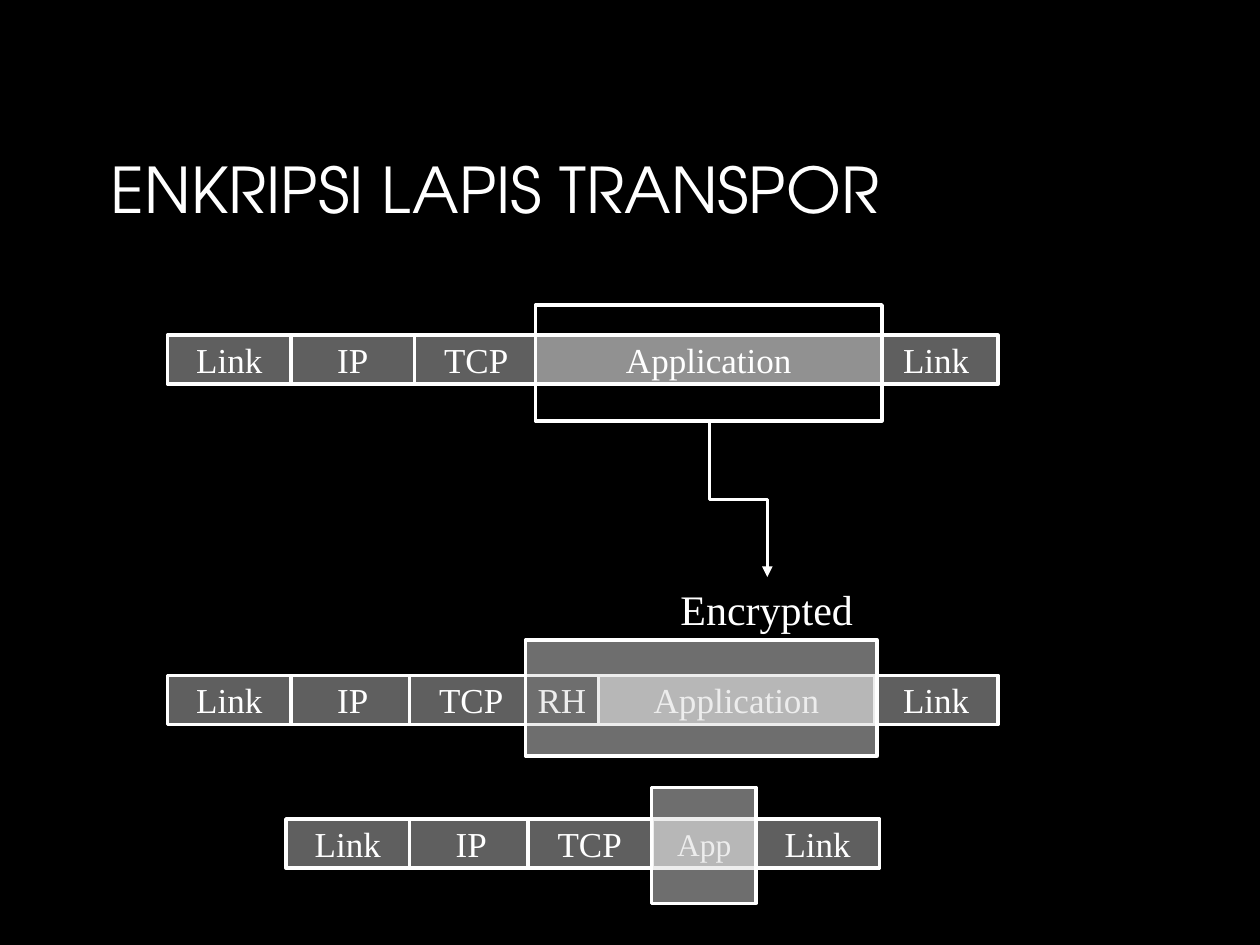
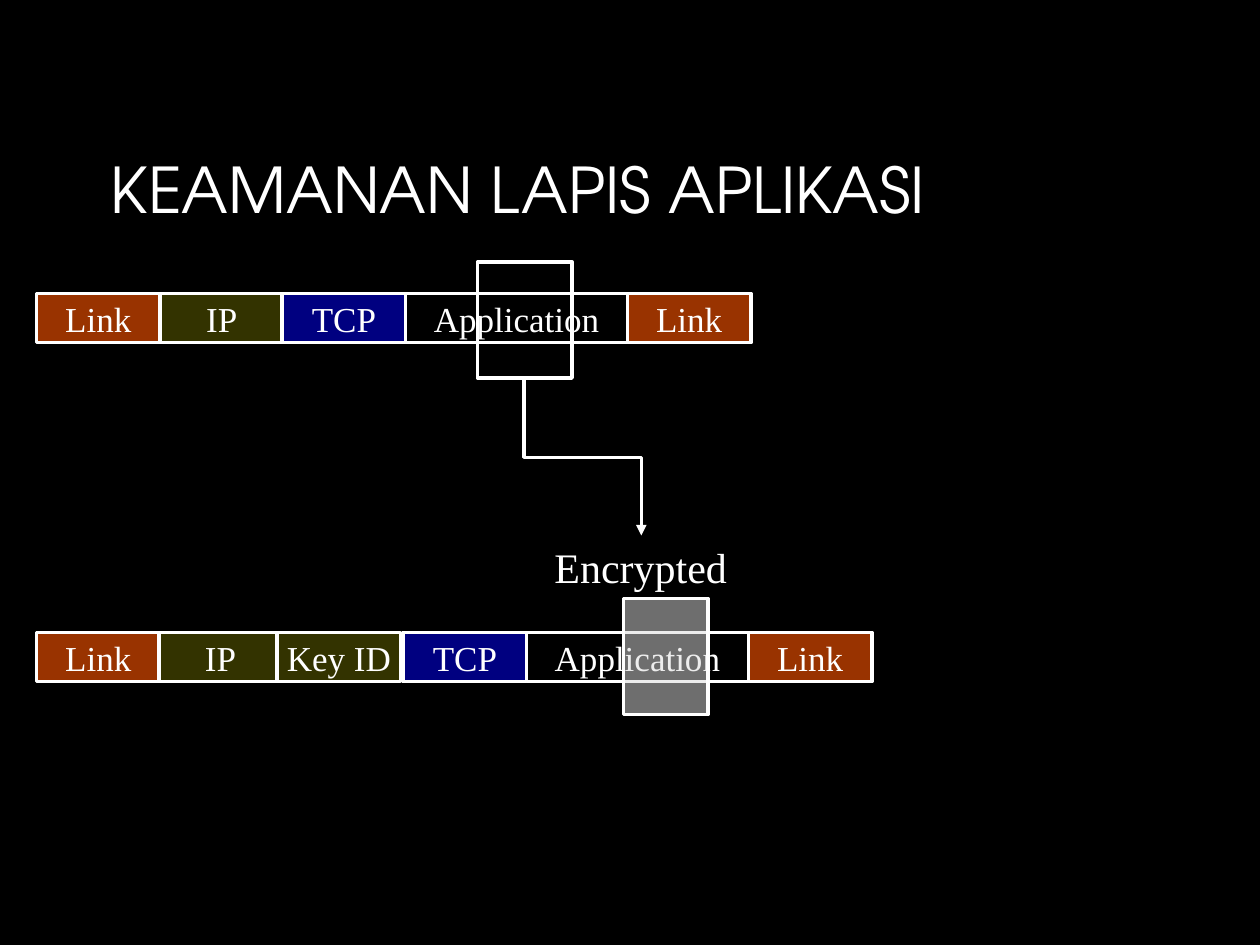
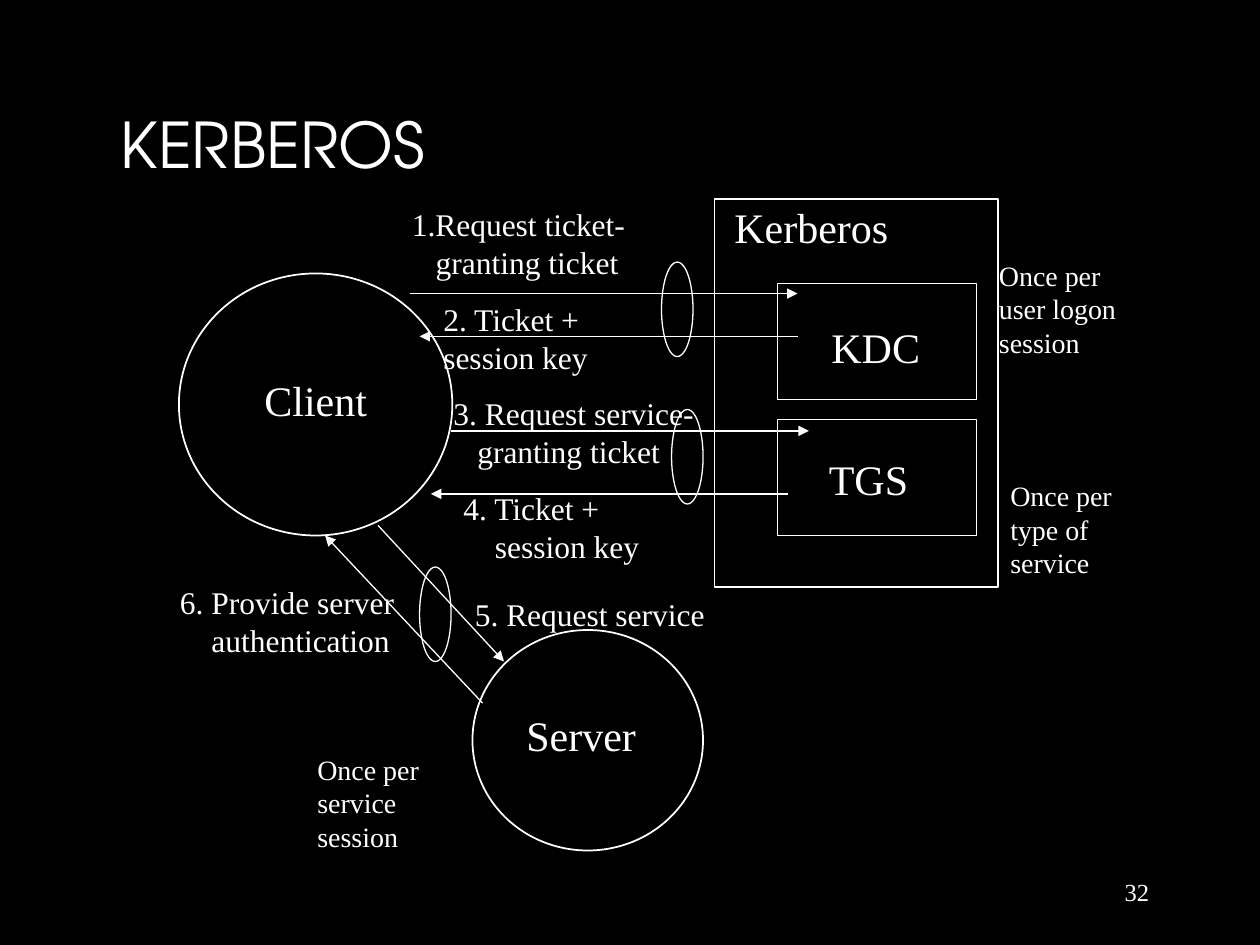
"""Build three slides on transport encryption, application security and Kerberos."""

from dataclasses import dataclass

from lxml.etree import SubElement
from pptx import Presentation
from pptx.dml.color import RGBColor
from pptx.enum.shapes import MSO_CONNECTOR as Link, MSO_SHAPE as Preset
from pptx.enum.text import MSO_ANCHOR as Anchor, MSO_AUTO_SIZE as AutoSize, PP_ALIGN as Align
from pptx.oxml.ns import qn
from pptx.presentation import Presentation as Deck
from pptx.shapes.autoshape import Shape
from pptx.shapes.connector import Connector
from pptx.slide import Slide
from pptx.text.text import TextFrame
from pptx.util import Inches, Pt


@dataclass(frozen=True)
class Theme:
    """Colours, fonts, type sizes and line widths of the deck."""

    black: str = "000000"
    white: str = "FFFFFF"
    header: str = "5F5F5F"
    payload: str = "919191"
    veil: str = "DDDDDD"
    link: str = "993300"
    ip: str = "333300"
    tcp: str = "000080"
    title_font: str = "TeX Gyre Adventor"
    body_font: str = "Times New Roman"
    title: int = 36
    heading: int = 24
    segment: int = 20
    step: int = 18
    note: int = 16
    page: int = 14
    thick: float = 2
    medium: float = 1
    thin: float = 0.75


THEME = Theme()


@dataclass(frozen=True)
class Box:
    """A rectangle in inches."""

    left: float
    top: float
    width: float
    height: float


@dataclass(frozen=True)
class Segment:
    """One field of a packet."""

    label: str
    left: float
    fill: str = THEME.header
    width: float = 0.98
    size: int = THEME.segment


@dataclass(frozen=True)
class Packet:
    """A row of fields, from back to front."""

    top: float
    segments: tuple[Segment, ...]


@dataclass(frozen=True)
class Caption:
    """Free text, with an optional indent for its following lines."""

    box: Box
    lines: tuple[str, ...]
    size: int
    indent: float = 0
    wrap: bool = False


@dataclass(frozen=True)
class Outline:
    """An unfilled shape of the protocol diagram."""

    preset: Preset
    box: Box
    weight: float = THEME.thin


@dataclass(frozen=True)
class Message:
    """An arrow between two parties."""

    start: tuple[float, float]
    end: tuple[float, float]


SEGMENT_HEIGHT = 0.39
FRAME_HEIGHT = 0.92
TITLE_BOX = Box(0.75, 0.53, 8.5, 1.33)

TRANSPORT_PACKETS = (
    Packet(2.66, (
        Segment("Link", 6.94), Segment("Link", 1.33), Segment("IP", 2.31),
        Segment("TCP", 3.29), Segment("Application", 4.25, THEME.payload, 2.75),
    )),
    Packet(5.36, (
        Segment("Link", 6.94), Segment("Link", 1.33), Segment("IP", 2.31),
        Segment("TCP", 3.25), Segment("Application", 4.75, THEME.payload, 2.19),
        Segment("RH", 4.17, THEME.black, 0.58),
    )),
    Packet(6.5, (
        Segment("Link", 6), Segment("Link", 2.27), Segment("IP", 3.25),
        Segment("TCP", 4.19), Segment("App", 5.18, THEME.payload, 0.82, THEME.step),
    )),
)

APPLICATION_PACKETS = (
    Packet(2.33, (
        Segment("Link", 4.98, THEME.link), Segment("Link", 0.29, THEME.link),
        Segment("IP", 1.27, THEME.ip), Segment("TCP", 2.24, THEME.tcp),
        Segment("Application", 3.22, THEME.black, 1.76),
    )),
    Packet(5.02, (
        Segment("Link", 5.94, THEME.link), Segment("Link", 0.29, THEME.link),
        Segment("IP", 1.26, THEME.ip), Segment("TCP", 3.2, THEME.tcp),
        Segment("Application", 4.18, THEME.black, 1.76), Segment("Key ID", 2.2, THEME.ip),
    )),
)

PARTIES = (
    Outline(Preset.OVAL, Box(1.42, 2.17, 2.17, 2.08), THEME.medium),
    Outline(Preset.OVAL, Box(3.75, 5, 1.83, 1.75), THEME.medium),
    Outline(Preset.RECTANGLE, Box(6.17, 2.25, 1.58, 0.92)),
    Outline(Preset.RECTANGLE, Box(6.17, 3.33, 1.58, 0.92)),
    Outline(Preset.RECTANGLE, Box(5.67, 1.58, 2.25, 3.08)),
)
EXCHANGES = tuple(
    Outline(Preset.OVAL, Box(left, top, 0.25, 0.75))
    for left, top in ((5.25, 2.08), (3.33, 4.5), (5.33, 3.25))
)

PROTOCOL_CAPTIONS = (
    Caption(Box(3.17, 1.58, 1.9, 0.7), ("1.Request ticket-", "granting ticket"), THEME.step, 0.19),
    Caption(Box(3.42, 2.33, 1.36, 0.7), ("2. Ticket +", "session key"), THEME.step),
    Caption(Box(3.5, 3.08, 2.11, 0.7), ("3. Request service-", "granting ticket"), THEME.step, 0.19),
    Caption(Box(3.58, 3.83, 1.6, 0.7), ("4. Ticket +", "session key"), THEME.step, 0.25),
    Caption(Box(3.67, 4.67, 2.03, 0.4), ("5. Request service",), THEME.step),
    Caption(Box(1.33, 4.58, 1.9, 0.7), ("6. Provide server", "authentication"), THEME.step, 0.25),
    Caption(Box(2, 2.92, 1.05, 0.5), ("Client",), THEME.heading),
    Caption(Box(6.5, 2.5, 0.91, 0.5), ("KDC",), THEME.heading),
    Caption(Box(6.48, 3.55, 0.83, 0.5), ("TGS",), THEME.heading),
    Caption(Box(4.08, 5.58, 1.07, 0.5), ("Server",), THEME.heading),
    Caption(Box(5.73, 1.55, 1.42, 0.5), ("Kerberos",), THEME.heading),
    Caption(Box(7.83, 2, 1.14, 0.9), ("Once per", "user logon", "session"), THEME.note),
    Caption(Box(2.42, 5.92, 1.01, 0.9), ("Once per", "service", "session"), THEME.note),
    Caption(Box(7.92, 3.75, 1.17, 0.9), ("Once per", "type of", "service"), THEME.note, wrap=True),
)

MESSAGES = (
    Message((3.25, 2.33), (6.33, 2.33)),
    Message((6.33, 2.67), (3.33, 2.67)),
    Message((3.58, 3.42), (6.42, 3.42)),
    Message((6.25, 3.92), (3.42, 3.92)),
    Message((3, 4.17), (4, 5.25)),
    Message((3.83, 5.58), (2.58, 4.25)),
)


def rgb(colour: str) -> RGBColor:
    """Turn a hex string into a colour."""
    return RGBColor.from_string(colour)


def place(box: Box) -> tuple[Inches, Inches, Inches, Inches]:
    """Give the box as lengths."""
    return Inches(box.left), Inches(box.top), Inches(box.width), Inches(box.height)


def write(frame: TextFrame, lines: tuple[str, ...], size: int, align: Align = Align.LEFT,
          font: str = THEME.body_font, indent: float = 0) -> None:
    """Write one paragraph per line, indenting those after the first."""
    for index, line in enumerate(lines):
        paragraph = frame.add_paragraph() if index else frame.paragraphs[0]
        paragraph.alignment = align
        if index and indent:
            paragraph._p.get_or_add_pPr().set("marL", str(Inches(indent)))
        run = paragraph.add_run()
        run.text = line
        run.font.name = font
        run.font.size = Pt(size)
        run.font.color.rgb = rgb(THEME.white)


def set_title_margins(frame: TextFrame) -> None:
    """Apply the wide margins shared by titles and page numbers."""
    frame.margin_left = frame.margin_right = Inches(0.13)
    frame.margin_top = frame.margin_bottom = Inches(0.07)


def add_titled_slide(deck: Deck, text: str, box: Box = TITLE_BOX) -> Slide:
    """Add a slide with the shared title style."""
    slide = deck.slides.add_slide(deck.slide_layouts[5])
    title = slide.shapes.title
    title.left, title.top, title.width, title.height = place(box)
    frame = title.text_frame
    frame.auto_size = AutoSize.NONE
    frame.word_wrap = True
    frame.vertical_anchor = Anchor.BOTTOM
    set_title_margins(frame)
    write(frame, (text,), THEME.title, font=THEME.title_font)
    frame.paragraphs[0].line_spacing = 0.8
    return slide


def add_outline(slide: Slide, outline: Outline) -> Shape:
    """Draw an unfilled white outline."""
    shape = slide.shapes.add_shape(outline.preset, *place(outline.box))
    shape.shadow.inherit = False
    shape.fill.background()
    shape.line.color.rgb = rgb(THEME.white)
    shape.line.width = Pt(outline.weight)
    return shape


def add_packet(slide: Slide, packet: Packet) -> None:
    """Draw the fields of a packet."""
    for segment in packet.segments:
        box = Box(segment.left, packet.top, segment.width, SEGMENT_HEIGHT)
        field = add_outline(slide, Outline(Preset.RECTANGLE, box, THEME.thick))
        field.fill.solid()
        field.fill.fore_color.rgb = rgb(segment.fill)
        field.text_frame.word_wrap = False
        field.text_frame.vertical_anchor = Anchor.MIDDLE
        write(field.text_frame, (segment.label,), segment.size, Align.CENTER)


def add_frame(slide: Slide, left: float, top: float, width: float) -> Shape:
    """Frame the part of a packet to be encrypted."""
    box = Box(left, top, width, FRAME_HEIGHT)
    return add_outline(slide, Outline(Preset.RECTANGLE, box, THEME.thick))


def add_veil(slide: Slide, left: float, top: float, width: float) -> None:
    """Cover the encrypted part of a packet with a translucent frame."""
    veil = add_frame(slide, left, top, width)
    veil.fill.solid()
    veil.fill.fore_color.rgb = rgb(THEME.veil)
    colour = veil._element.spPr.find(qn("a:solidFill"))[0]
    SubElement(colour, qn("a:alpha")).set("val", "50000")


def add_caption(slide: Slide, caption: Caption, align: Align = Align.LEFT,
                anchor: Anchor = Anchor.TOP) -> None:
    """Add free text that fits its box."""
    frame = slide.shapes.add_textbox(*place(caption.box)).text_frame
    frame.word_wrap = caption.wrap
    frame.auto_size = AutoSize.SHAPE_TO_FIT_TEXT
    frame.vertical_anchor = anchor
    write(frame, caption.lines, caption.size, align, indent=caption.indent)


def style_arrow(arrow: Connector, weight: float) -> None:
    """Make a connector a white arrow without shadow."""
    arrow.line.color.rgb = rgb(THEME.white)
    arrow.line.width = Pt(weight)
    properties = arrow._element.spPr
    SubElement(properties.find(qn("a:ln")), qn("a:tailEnd")).set("type", "triangle")
    SubElement(properties, qn("a:effectLst"))


def add_message(slide: Slide, message: Message) -> None:
    """Draw a straight arrow."""
    ends = (Inches(value) for value in message.start + message.end)
    style_arrow(slide.shapes.add_connector(Link.STRAIGHT, *ends), THEME.thin)


def add_step_down(slide: Slide, start: tuple[float, float], end: tuple[float, float]) -> None:
    """Draw an elbow arrow that leaves and arrives vertically."""
    run, drop = end[0] - start[0], end[1] - start[1]
    left = (start[0] + end[0] - drop) / 2
    top = (start[1] + end[1] - run) / 2
    arrow = slide.shapes.add_connector(
        Link.ELBOW, Inches(left + drop), Inches(top), Inches(left), Inches(top + run))
    arrow._element.spPr.find(qn("a:xfrm")).set("rot", str(270 * 60000))
    style_arrow(arrow, THEME.thick)


def add_encrypted_label(slide: Slide, left: float, top: float) -> None:
    """Name the result of the encryption."""
    caption = Caption(Box(left, top, 1.57, 0.5), ("Encrypted",), THEME.heading)
    add_caption(slide, caption, Align.CENTER, Anchor.MIDDLE)


def build_transport(deck: Deck) -> None:
    """Show encryption at the transport layer."""
    slide = add_titled_slide(deck, "ENKRIPSI LAPIS TRANSPOR")
    for packet in TRANSPORT_PACKETS:
        add_packet(slide, packet)
    add_encrypted_label(slide, 5.3, 4.58)
    add_frame(slide, 4.25, 2.42, 2.75)
    add_step_down(slide, (5.63, 3.35), (6.09, 4.58))
    add_veil(slide, 5.17, 6.25, 0.83)
    add_veil(slide, 4.17, 5.08, 2.79)


def build_application(deck: Deck) -> None:
    """Show security at the application layer."""
    slide = add_titled_slide(deck, "KEAMANAN LAPIS APLIKASI")
    for packet in APPLICATION_PACKETS:
        add_packet(slide, packet)
    add_veil(slide, 4.95, 4.75, 0.67)
    add_encrypted_label(slide, 4.3, 4.25)
    add_frame(slide, 3.79, 2.08, 0.75)
    add_step_down(slide, (4.16, 3.01), (5.09, 4.25))


def build_kerberos(deck: Deck) -> None:
    """Show the messages of the Kerberos protocol."""
    slide = add_titled_slide(deck, "KERBEROS", Box(0.83, 0.25, 8.5, 1.25))
    for outline in PARTIES + EXCHANGES:
        add_outline(slide, outline)
    for caption in PROTOCOL_CAPTIONS:
        add_caption(slide, caption)
    for message in MESSAGES:
        add_message(slide, message)
    page = slide.shapes.add_textbox(*place(Box(8.57, 6.97, 0.68, 0.21))).text_frame
    page.word_wrap = True
    page.vertical_anchor = Anchor.MIDDLE
    set_title_margins(page)
    write(page, ("32",), THEME.page, Align.RIGHT)


def main() -> None:
    """Build and save the deck."""
    deck = Presentation()
    deck.slide_width, deck.slide_height = Inches(10), Inches(7.5)
    background = deck.slide_master.background.fill
    background.solid()
    background.fore_color.rgb = rgb(THEME.black)
    build_transport(deck)
    build_application(deck)
    build_kerberos(deck)
    deck.save("out.pptx")


if __name__ == "__main__":
    main()
